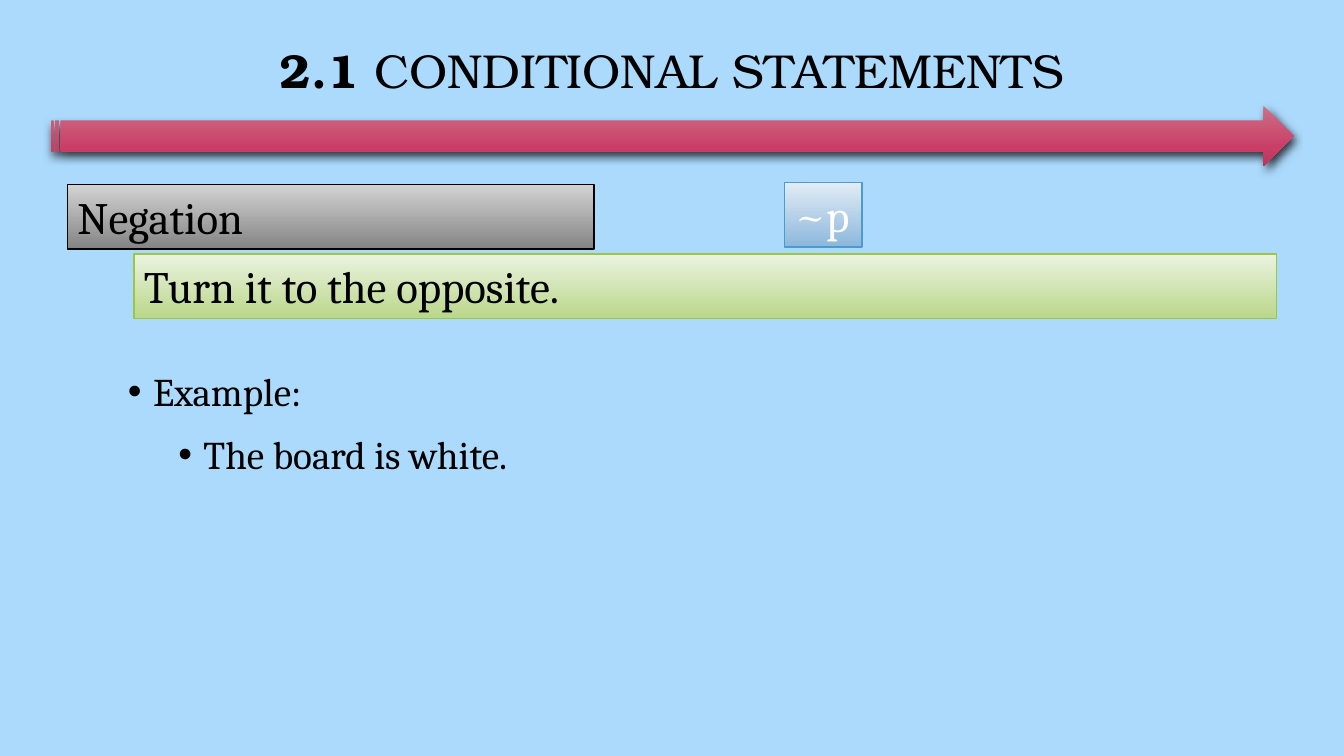
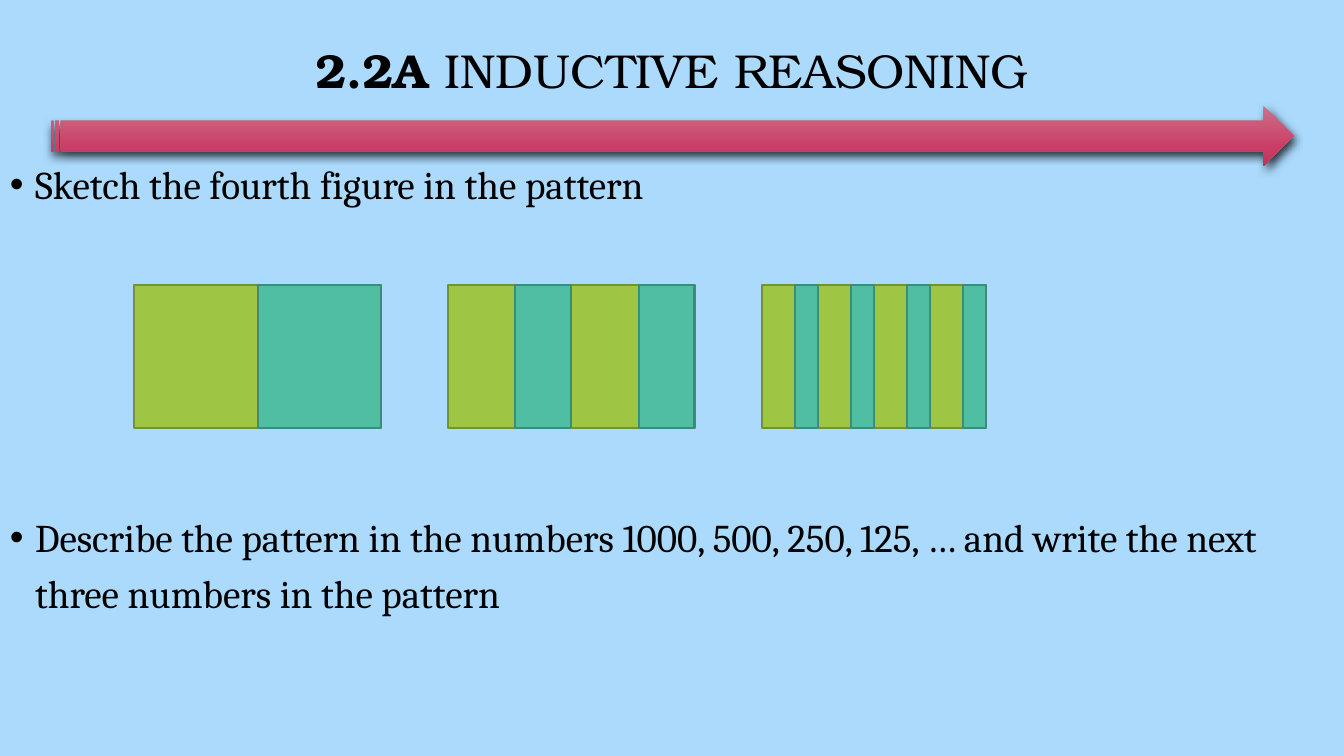
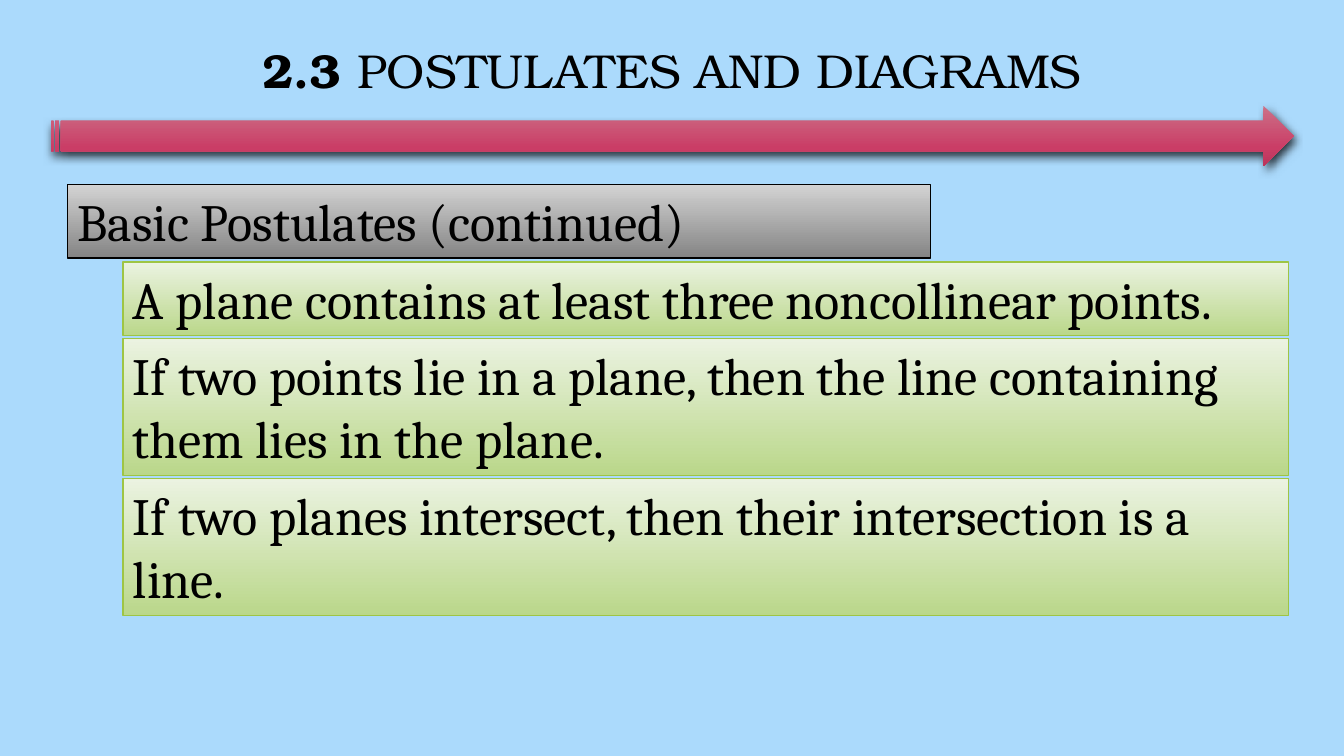
from lxml.etree import SubElement
from pptx import Presentation
from pptx.dml.color import RGBColor
from pptx.enum.shapes import MSO_SHAPE
from pptx.enum.text import MSO_ANCHOR, PP_ALIGN
from pptx.oxml.ns import qn
from pptx.util import Inches, Pt

SLIDE_WIDTH, SLIDE_HEIGHT = 13.33, 7.5
BACKGROUND = "ABDAFC"
BLACK, WHITE = "000000", "FFFFFF"
TITLE_FONT, BODY_FONT = "TeX Gyre Bonum", "Cambria"
ARROW_STOPS = [(0, "CC7087"), (69, "CA3D66"), (100, "BA355B")]
GRAY_BAND = ([(0, "D3D3D3"), (100, "848484")], BLACK)
GREEN_BAND = ([(0, "EBF3E1"), (100, "BAD78A")], "9EC544")
BLUE_BAND = ([(0, "E3ECF5"), (100, "8CB8DC")], "4A9CCC")
GREEN_TILE = ("9EC544", "759232")
TEAL_TILE = ("50BEA3", "3B8D79")
UNIT = 1 / 9


def color(code):
    return RGBColor.from_string(code)


def inches(*lengths):
    return [Inches(length) for length in lengths]


def fill_gradient(shape, stops):
    shape.fill.gradient()
    shape.fill.gradient_angle = 270
    stop_list = shape._element.spPr.find(".//" + qn("a:gsLst"))
    for old_stop in list(stop_list):
        stop_list.remove(old_stop)
    for position, code in stops:
        stop = SubElement(stop_list, qn("a:gs"), pos=str(position * 1000))
        SubElement(stop, qn("a:srgbClr"), val=code)


def set_outline(shape, code, width):
    shape.line.color.rgb = color(code)
    shape.line.width = Pt(width)


def add_shadow(shape, code, opacity, blur, distance):
    effects = shape._element.spPr.find(qn("a:effectLst"))
    shadow = SubElement(effects, qn("a:outerShdw"), blurRad=str(Pt(blur)),
                        dist=str(Pt(distance)), dir="5400000", rotWithShape="0")
    shade = SubElement(shadow, qn("a:srgbClr"), val=code)
    SubElement(shade, qn("a:alpha"), val=str(opacity * 1000))


def add_span(para, text, size=28, font=BODY_FONT, code=BLACK, bold=False):
    span = para.add_run()
    span.text = text
    span.font.size = Pt(size)
    span.font.name = font
    span.font.bold = bold
    span.font.color.rgb = color(code)


def add_box(page, left, top, width, height):
    box = page.shapes.add_textbox(*inches(left, top, width, height))
    box.text_frame.word_wrap = True
    return box


def add_title(page, number, name):
    frame = add_box(page, 0, 0, SLIDE_WIDTH, 1.45).text_frame
    frame.vertical_anchor = MSO_ANCHOR.MIDDLE
    para = frame.paragraphs[0]
    para.alignment = PP_ALIGN.CENTER
    para.line_spacing = 0.9
    add_span(para, number + " ", size=34, font=TITLE_FONT, bold=True)
    add_span(para, name, size=34, font=TITLE_FONT)


def add_arrow(page):
    arrow = page.shapes.add_shape(MSO_SHAPE.STRIPED_RIGHT_ARROW,
                                  *inches(0.51, 1.05, 12.32, 0.6))
    arrow.shadow.inherit = False
    fill_gradient(arrow, ARROW_STOPS)
    arrow.line.fill.background()
    add_shadow(arrow, BLACK, opacity=76, blur=6, distance=3)


def add_page(deck, number, name):
    page = deck.slides.add_slide(deck.slide_layouts[6])
    add_arrow(page)
    add_title(page, number, name)
    return page


def add_band(page, text, left, top, width, height, style, **text_format):
    stops, outline = style
    box = add_box(page, left, top, width, height)
    fill_gradient(box, stops)
    set_outline(box, outline, 1)
    add_span(box.text_frame.paragraphs[0], text, **text_format)


def add_bullets(page, left, top, width, height, items, space_before):
    frame = add_box(page, left, top, width, height).text_frame
    for index, (text, indent) in enumerate(items):
        para = frame.add_paragraph() if index else frame.paragraphs[0]
        para.line_spacing = 1.2
        para.space_before = Pt(space_before)
        properties = para._p.get_or_add_pPr()
        properties.set("marL", str(Inches(indent)))
        properties.set("indent", str(Inches(-0.25)))
        SubElement(properties, qn("a:buFont"), typeface="Arial")
        SubElement(properties, qn("a:buChar"), char="•")
        add_span(para, text)


def add_tile(page, left, width, style):
    fill, outline = style
    tile = page.shapes.add_shape(MSO_SHAPE.RECTANGLE,
                                 *inches(left, 2.83, width, 1.42))
    tile.shadow.inherit = False
    tile.fill.solid()
    tile.fill.fore_color.rgb = color(fill)
    set_outline(tile, outline, 1.5)


def add_striped_figure(page, left, count, green, teal):
    pitch = green + teal
    add_tile(page, left * UNIT, count * pitch * UNIT, GREEN_TILE)
    for index in range(count):
        add_tile(page, (left + index * pitch + green) * UNIT, teal * UNIT, TEAL_TILE)


def build_conditional(deck):
    page = add_page(deck, "2.1", "CONDITIONAL STATEMENTS")
    add_bullets(page, 0.67, 3.5, 12, 3.5,
                [("Example:", 0.75), ("The board is white.", 1.25)], 5)
    add_band(page, "~p", 7.78, 1.81, 0.77, 0.64, BLUE_BAND, size=32, code=WHITE)
    add_band(page, "Negation", 0.67, 1.83, 5.22, 0.64, GRAY_BAND, size=32)
    add_band(page, "Turn it to the opposite.", 1.33, 2.52, 11.33, 0.64,
             GREEN_BAND, size=32)


def build_inductive(deck):
    page = add_page(deck, "2.2A", "INDUCTIVE REASONING")
    questions = [
        (1.45, 0.7, "Sketch the fourth figure in the pattern"),
        (4.95, 1.3, "Describe the pattern in the numbers 1000, 500, 250, 125, … "
                    "and write the next three numbers in the pattern"),
    ]
    for top, height, text in questions:
        add_bullets(page, 0, top, SLIDE_WIDTH, height, [(text, 0.25)], 10)
    for index, (count, green, teal) in enumerate([(1, 11, 11), (2, 6, 5), (4, 3, 2)]):
        add_striped_figure(page, 12 + index * 28, count, green, teal)


def build_postulates(deck):
    page = add_page(deck, "2.3", "POSTULATES AND DIAGRAMS")
    add_band(page, "Basic Postulates (continued)", 0.67, 1.83, 8.56, 0.73,
             GRAY_BAND, size=37.3)
    postulates = [
        ("A plane contains at least three noncollinear points.", 0.73),
        ("If two points lie in a plane, then the line containing them lies "
         "in the plane.", 1.36),
        ("If two planes intersect, then their intersection is a line.", 1.36),
    ]
    top = 2.6
    for text, height in postulates:
        add_band(page, text, 1.22, top, 11.56, height, GREEN_BAND, size=37.3)
        top += height + 0.03


def main():
    deck = Presentation()
    deck.slide_width, deck.slide_height = inches(SLIDE_WIDTH, SLIDE_HEIGHT)
    backdrop = deck.slide_master.background.fill
    backdrop.solid()
    backdrop.fore_color.rgb = color(BACKGROUND)
    build_conditional(deck)
    build_inductive(deck)
    build_postulates(deck)
    deck.save("out.pptx")


if __name__ == "__main__":
    main()
